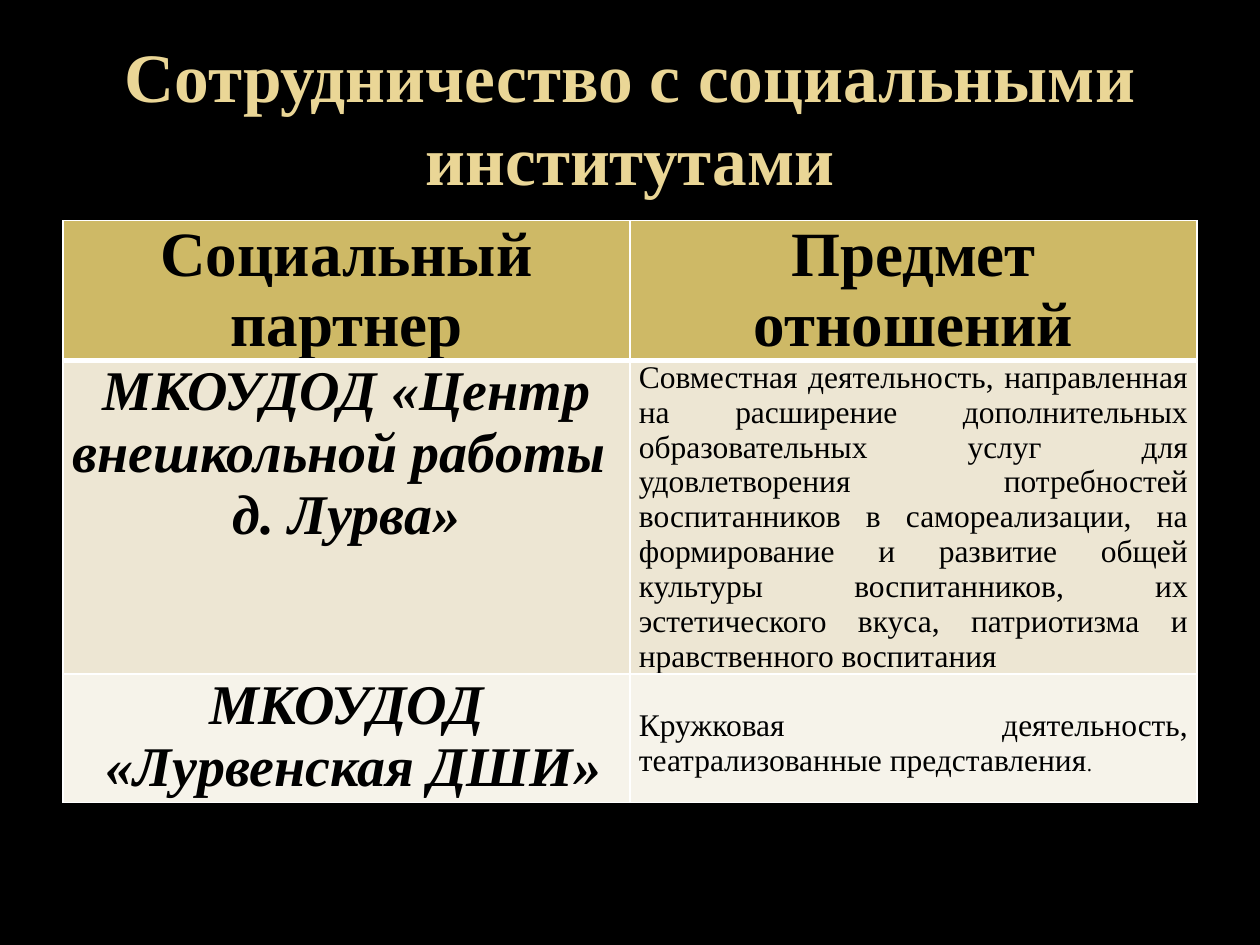
from lxml import etree
from pptx import Presentation
from pptx import util as u
from pptx.dml.color import RGBColor
from pptx.enum import text
from pptx.oxml.ns import qn

FACE = "Times New Roman"
MID, JUST = text.PP_ALIGN.CENTER, text.PP_ALIGN.JUSTIFY


def style(run, size, color="000000", bold=True, italic=False):
    font = run.font
    look = dict(name=FACE, size=u.Pt(size), bold=bold, italic=italic)
    for key, val in look.items():
        setattr(font, key, val)
    font.color.rgb = RGBColor.from_string(color)


def edge(cell, side, width):
    """Draw one white border of a cell; call before the cell is filled."""
    line = etree.SubElement(cell._tc.get_or_add_tcPr(), qn("a:ln" + side),
                            w=str(u.Pt(width)))
    fill = etree.SubElement(line, qn("a:solidFill"))
    etree.SubElement(fill, qn("a:srgbClr"), val="FFFFFF")


deck = Presentation()
deck.slide_width, deck.slide_height = u.Cm(25.4), u.Cm(19.05)
slide = deck.slides.add_slide(deck.slide_layouts[5])
back = slide.background.fill
back.solid()
back.fore_color.rgb = RGBColor.from_string("000000")

# Title
title = slide.shapes.title
place = dict(left=1.27, top=0.76, width=22.86, height=3.18)
for key, val in place.items():
    setattr(title, key, u.Cm(val))
frame = title.text_frame
frame.auto_size = text.MSO_AUTO_SIZE.NONE
frame.vertical_anchor = text.MSO_ANCHOR.MIDDLE
para = frame.paragraphs[0]
para.alignment, para.line_spacing = MID, 1.0
run = para.add_run()
run.text = "Сотрудничество с социальными институтами"
style(run, 39.6, "EAD696")

# Table: each cell is a list of paragraphs, each paragraph a list of (words, size)
rows = [
    (2.59, "CEB966", [[("Социальный партнер", 36)]], [[("Предмет отношений", 36)]]),
    (4.83, "EDE6D3",
     [[("МКОУДОД «Центр внешкольной работы ", 32)], [("д. Лурва»", 32)]],
     [[("Совместная деятельность, направленная на расширение дополнительных "
        "образовательных услуг для удовлетворения потребностей воспитанников "
        "в самореализации, на формирование и развитие общей культуры "
        "воспитанников, их эстетического вкуса, патриотизма и нравственного "
        "воспитания", 18)]]),
    (2.59, "F6F3EA",
     [[("МКОУДОД", 32)], [(" «Лурвенская ДШИ»", 32)]],
     [[("Кружковая деятельность, театрализованные представления", 18), (".", 12)]]),
]
high = sum(row[0] for row in rows)
table = slide.shapes.add_table(len(rows), 2, u.Cm(1.27), u.Cm(4.45),
                               u.Cm(22.86), u.Cm(high)).table
for i, (tall, color, *cells) in enumerate(rows):
    table.rows[i].height = u.Cm(tall)
    for j, paras in enumerate(cells):
        cell = table.cell(i, j)
        body = i > 0 and j == 1
        cell.margin_left = cell.margin_right = u.Cm(0.18)
        cell.margin_top = u.Cm(0.7 if body and i == 2 else 0)
        cell.margin_bottom = 0
        for side in "LRTB":
            heavy = (i, side) in [(0, "B"), (1, "T")]
            edge(cell, side, 3 if heavy else 1)
        cell.fill.solid()
        cell.fill.fore_color.rgb = RGBColor.from_string(color)
        for n, parts in enumerate(paras):
            frame = cell.text_frame
            para = frame.add_paragraph() if n else frame.paragraphs[0]
            para.alignment = JUST if body else MID
            for words, size in parts:
                run = para.add_run()
                run.text = words
                style(run, size, bold=not body, italic=i > 0 and not body)

deck.save("out.pptx")
